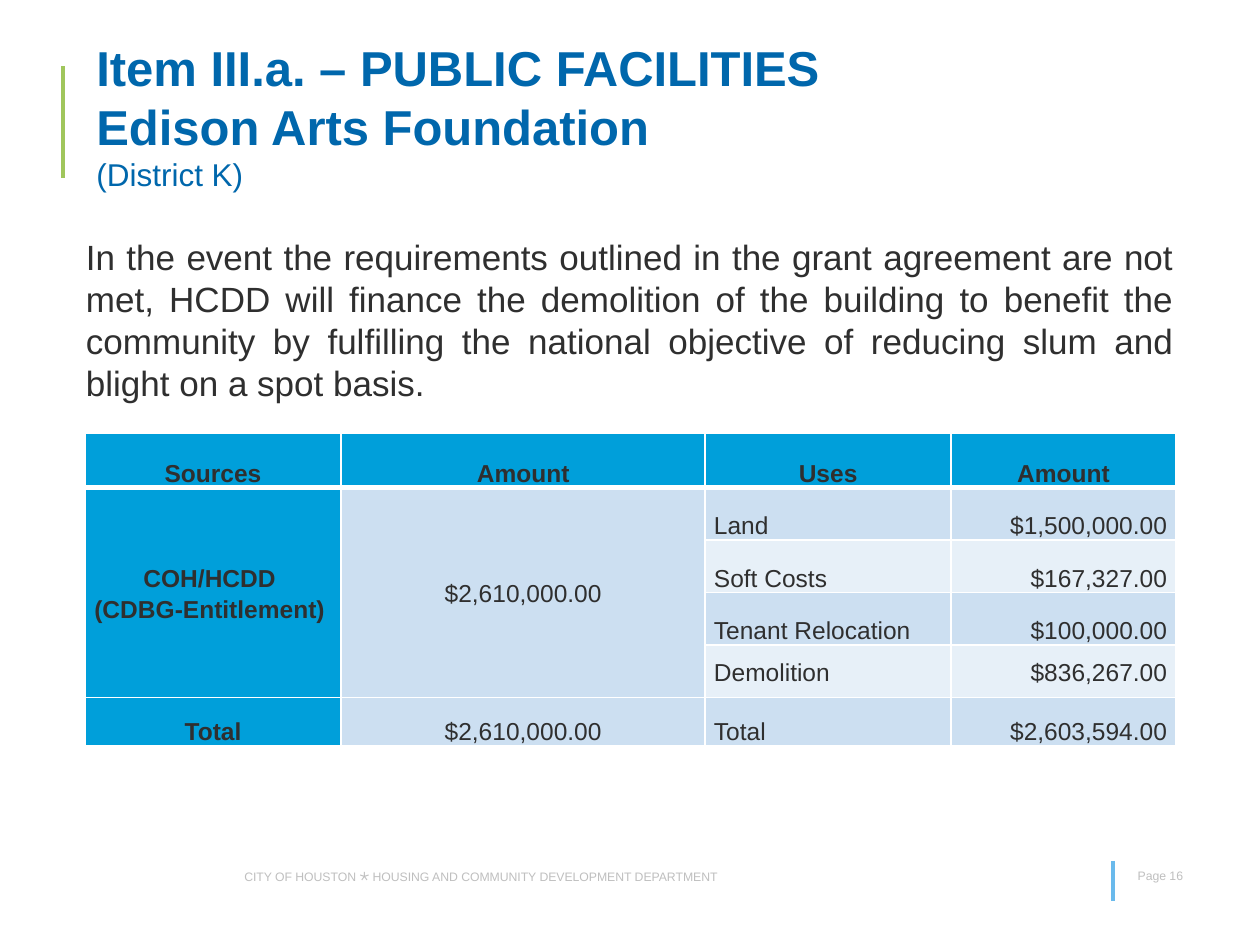
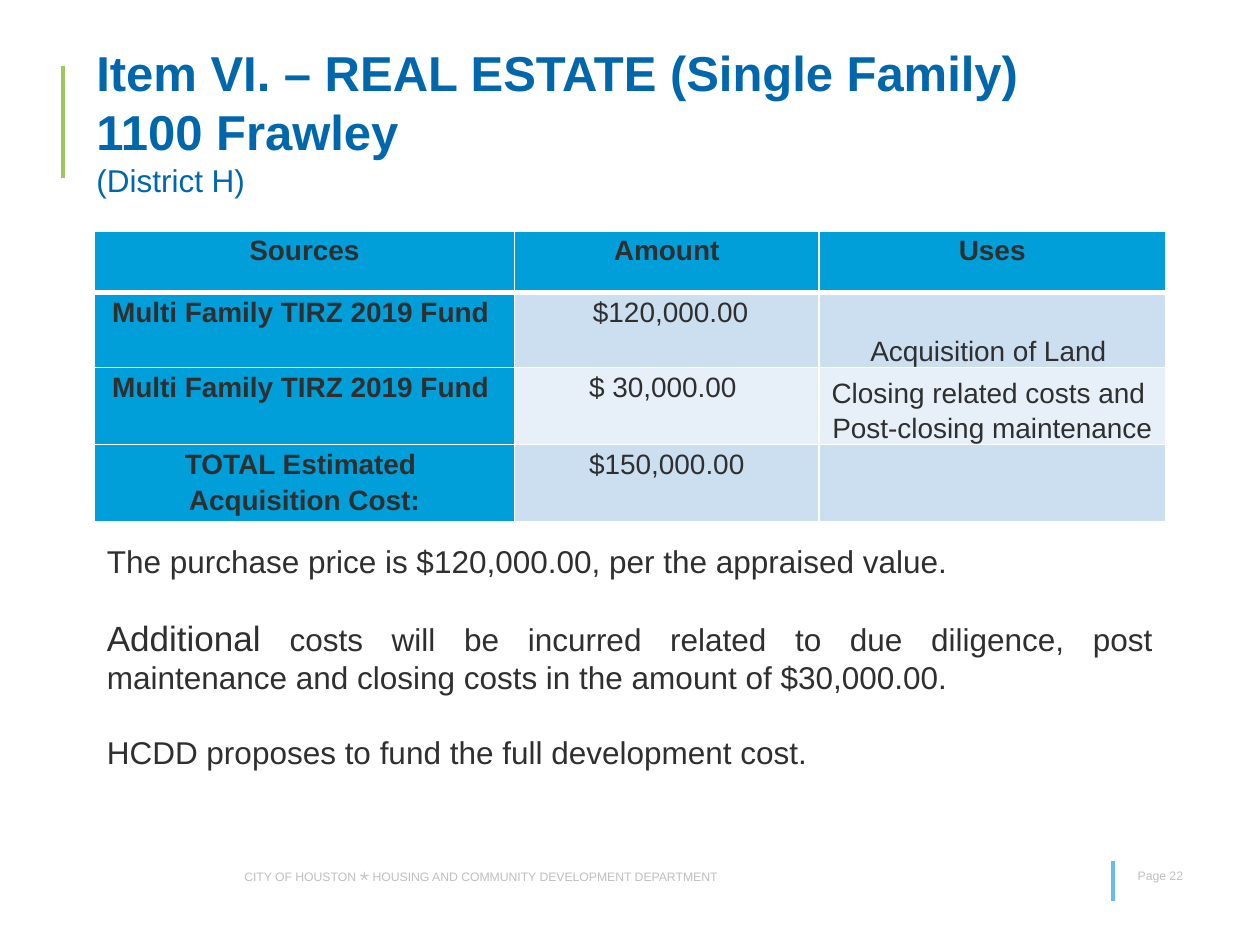
from lxml import etree
from pptx import Presentation
from pptx.dml.color import RGBColor
from pptx.enum import shapes, text
from pptx.oxml import ns
from pptx.util import Pt

FONT = "Arial"
TITLE_BLUE, INK, GREY = "0067AC", "2F2F2F", "BFBFBF"
GREEN, SKY, WHITE = "A0C65C", "6ABAEC", "FFFFFF"
HEADER_FILL, BANDS = "009FDA", ("E7F0F8", "CCDFF1")

LEFT, CENTER = text.PP_ALIGN.LEFT, text.PP_ALIGN.CENTER
RIGHT, JUSTIFY = text.PP_ALIGN.RIGHT, text.PP_ALIGN.JUSTIFY
TOP, MIDDLE, BOTTOM = text.MSO_ANCHOR.TOP, text.MSO_ANCHOR.MIDDLE, text.MSO_ANCHOR.BOTTOM

FOOTER = [("CITY OF HOUSTON ", 7), ("⋆", 10),
          (" HOUSING AND COMMUNITY DEVELOPMENT DEPARTMENT", 7)]
RULES = [(36, 38, 102, GREEN), (636, 492, 515, SKY)]

PAGES = [
    {
        "number": 16,
        "title": ["Item III.a. – PUBLIC FACILITIES", "Edison Arts Foundation"],
        "district": "(District K)",
        "title_box": (48, 18, 636, 96),
        "body": [[("In the event the requirements outlined in the grant agreement are not met, "
                   "HCDD will finance the demolition of the building to benefit the community by "
                   "fulfilling the national objective of reducing slum and blight on a spot basis. ", 20)]],
        "body_box": (42, 131, 636, 104),
        "table": {
            "origin": (48.5, 247.5),
            "columns": [146.5, 208, 140.5, 128.5],
            "rows": [31, 30, 30, 30, 30, 28],
            "size": 14,
            "alignments": [CENTER, CENTER, LEFT, RIGHT],
            "anchor": BOTTOM,
            "anchors": {(1, 0): MIDDLE, (1, 1): MIDDLE, (4, 2): MIDDLE, (4, 3): MIDDLE},
            "merges": [((1, 0), (4, 0)), ((1, 1), (4, 1))],
            "cells": [
                ["Sources", "Amount", "Uses", "Amount"],
                ["COH/HCDD \n(CDBG-Entitlement) ", "$2,610,000.00", "Land", "$1,500,000.00"],
                ["", "", "Soft Costs", "$167,327.00"],
                ["", "", "Tenant Relocation", "$100,000.00"],
                ["", "", "Demolition", "$836,267.00"],
                ["Total", "$2,610,000.00", "Total", "$2,603,594.00"],
            ],
        },
    },
    {
        "number": 22,
        "title": ["Item VI. – REAL ESTATE (Single Family)", "1100 Frawley "],
        "district": "(District H)",
        "title_box": (48, 18, 666, 102),
        "body": [
            [("The purchase price is $120,000.00, per the appraised value. ", 18)],
            [("Additional", 20),
             (" costs will be incurred related to due diligence, post maintenance "
              "and closing costs in the amount of $30,000.00. ", 18)],
            [("HCDD proposes to fund the full development cost. ", 18)],
        ],
        "body_box": (54, 306, 612, 140),
        "table": {
            "origin": (54, 132),
            "columns": [240, 174, 198],
            "rows": [35, 43, 41, 41],
            "size": 16,
            "alignments": [CENTER, CENTER, CENTER],
            "anchor": TOP,
            "anchors": {(1, 2): BOTTOM, (2, 2): BOTTOM},
            "merges": [],
            "cells": [
                ["Sources", "Amount", "Uses"],
                ["Multi Family TIRZ 2019 Fund ", " $120,000.00", "Acquisition of Land "],
                ["Multi Family TIRZ 2019 Fund ", "$ 30,000.00 ",
                 "Closing related costs and \nPost-closing maintenance"],
                ["TOTAL Estimated \nAcquisition Cost:", "$150,000.00", ""],
            ],
        },
    },
]


def color(value):
    return RGBColor.from_string(value)


def style(font, size, ink, bold=False):
    font.name = FONT
    font.size = Pt(size)
    font.bold = bold
    font.color.rgb = color(ink)


def add_text_box(slide, box, anchor=TOP):
    frame = slide.shapes.add_textbox(*map(Pt, box)).text_frame
    frame.word_wrap = True
    frame.vertical_anchor = anchor
    return frame


def write_runs(paragraph, runs, ink):
    sizes = {size for _, size in runs}
    for words, size in runs:
        run = paragraph.add_run()
        run.text = words
        if len(sizes) > 1:
            style(run.font, size, ink)
    if len(sizes) == 1:
        style(paragraph.font, sizes.pop(), ink)


def add_rule(slide, x, top, bottom, ink):
    rule = slide.shapes.add_connector(shapes.MSO_CONNECTOR.STRAIGHT, Pt(x), Pt(top), Pt(x), Pt(bottom))
    rule.line.color.rgb = color(ink)
    rule.line.width = Pt(2.25)
    etree.SubElement(rule._element.spPr, ns.qn("a:effectLst"))


def add_frame(slide, number):
    write_runs(add_text_box(slide, (132.5, 490, 300, 20)).paragraphs[0], FOOTER, GREY)
    for rule in RULES:
        add_rule(slide, *rule)
    page_label = add_text_box(slide, (643, 492.5, 46, 22))
    write_runs(page_label.paragraphs[0], [(f"Page {number}", 7)], GREY)


def add_title(slide, box, lines, district):
    paragraph = add_text_box(slide, box, MIDDLE).paragraphs[0]
    for line in lines:
        run = paragraph.add_run()
        run.text = line
        style(run.font, 28, TITLE_BLUE, True)
        paragraph.add_line_break()
    run = paragraph.add_run()
    run.text = district
    style(run.font, 18, TITLE_BLUE)


def add_body(slide, box, paragraphs):
    frame = add_text_box(slide, box)
    for index, runs in enumerate(paragraphs):
        paragraph = frame.add_paragraph() if index else frame.paragraphs[0]
        paragraph.alignment = JUSTIFY
        if index:
            paragraph.space_before = Pt(21)
        write_runs(paragraph, runs, INK)


def set_borders(cell, row):
    properties = cell._tc.get_or_add_tcPr()
    widths = {"lnL": 1, "lnR": 1, "lnT": 3 if row == 1 else 1, "lnB": 3 if row == 0 else 1}
    for side, width in widths.items():
        border = etree.SubElement(properties, ns.qn(f"a:{side}"), w=str(Pt(width)))
        fill = etree.SubElement(border, ns.qn("a:solidFill"))
        etree.SubElement(fill, ns.qn("a:srgbClr"), val=WHITE)


def fill_cell(cell, row, column, words, data):
    heading = row == 0 or column == 0
    set_borders(cell, row)
    cell.fill.solid()
    cell.fill.fore_color.rgb = color(HEADER_FILL if heading else BANDS[row % 2])
    cell.margin_left = cell.margin_right = Pt(5)
    cell.margin_top = cell.margin_bottom = Pt(0)
    cell.vertical_anchor = data["anchors"].get((row, column), data["anchor"])
    cell.text = words
    for paragraph in cell.text_frame.paragraphs:
        paragraph.alignment = CENTER if row == 0 else data["alignments"][column]
        paragraph.line_spacing = 1.15
        style(paragraph.font, data["size"], INK, heading)


def add_table(slide, data):
    columns, rows = data["columns"], data["rows"]
    left, top = data["origin"]
    table = slide.shapes.add_table(len(rows), len(columns), Pt(left), Pt(top),
                                   Pt(sum(columns)), Pt(sum(rows))).table
    table.first_row = table.horz_banding = False
    for column, width in zip(table.columns, columns):
        column.width = Pt(width)
    for row, height in zip(table.rows, rows):
        row.height = Pt(height)
    for row, line in enumerate(data["cells"]):
        for column, words in enumerate(line):
            fill_cell(table.cell(row, column), row, column, words, data)
    for first, last in data["merges"]:
        table.cell(*first).merge(table.cell(*last))


def main():
    presentation = Presentation()
    presentation.slide_width, presentation.slide_height = Pt(720), Pt(540)
    for page in PAGES:
        slide = presentation.slides.add_slide(presentation.slide_layouts[6])
        add_frame(slide, page["number"])
        add_title(slide, page["title_box"], page["title"], page["district"])
        add_body(slide, page["body_box"], page["body"])
        add_table(slide, page["table"])
    presentation.save("out.pptx")


if __name__ == "__main__":
    main()
